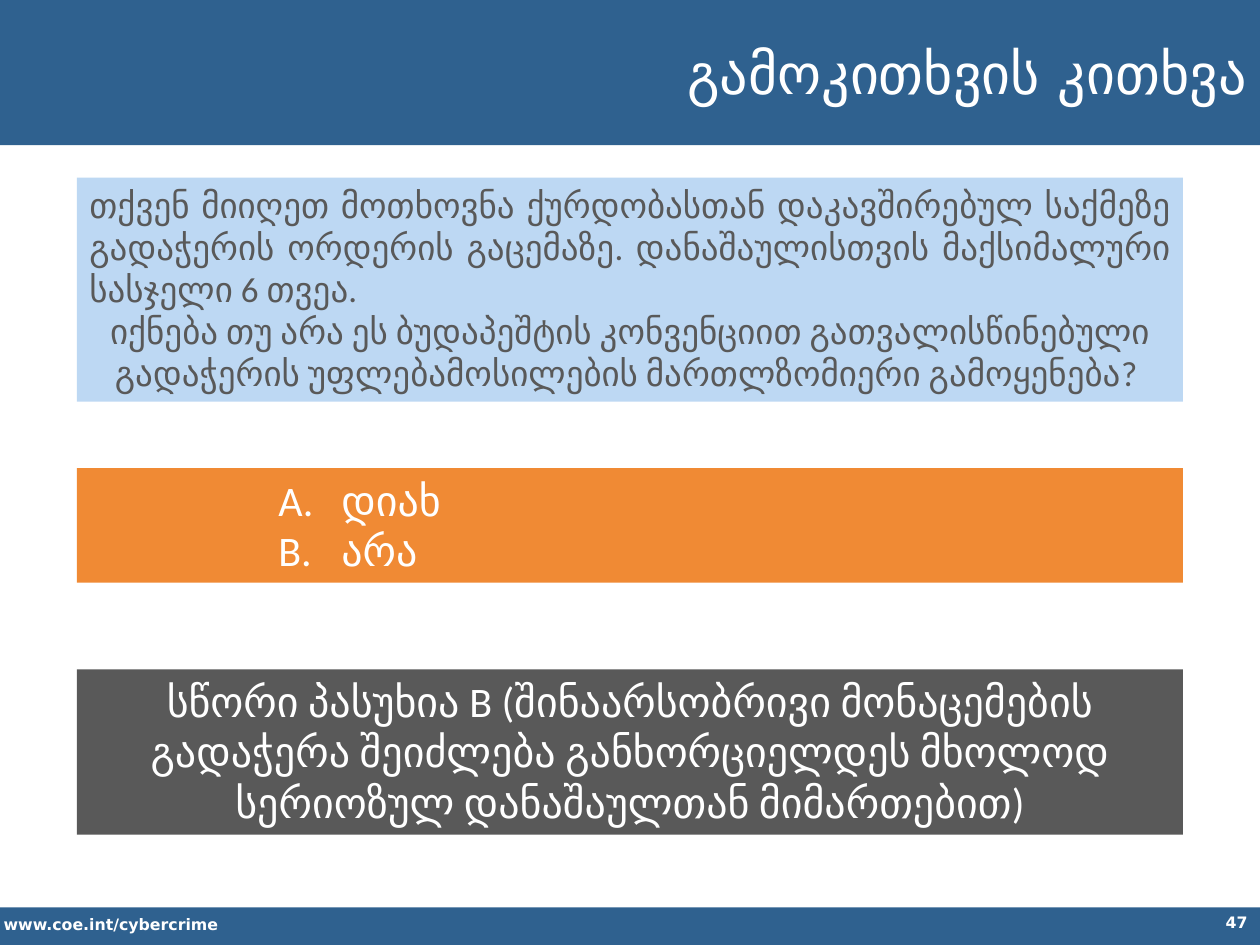
from dataclasses import dataclass

import pptx
import pptx.dml.color
import pptx.enum.shapes
import pptx.enum.text
import pptx.util
from lxml import etree
from pptx.oxml.ns import qn

Pt = pptx.util.Pt
ALIGN = pptx.enum.text.PP_ALIGN
ANCHOR = pptx.enum.text.MSO_ANCHOR
AUTO_SIZE = pptx.enum.text.MSO_AUTO_SIZE

COLORS = {
    "band": "2F618F",
    "question": "BDD8F3",
    "options": "F08A34",
    "answer": "595959",
    "dark": "595959",
    "white": "FFFFFF",
}
PANEL_LEFT, PANEL_WIDTH = 44, 632


@dataclass
class Line:
    text: str
    align: ALIGN = ALIGN.LEFT
    numbered: bool = False


@dataclass
class Style:
    size: float
    color: str = "white"
    name: str = "Calibri"
    bold: bool = False


@dataclass
class Panel:
    top: float
    height: float
    fill: str
    style: Style
    lines: list[Line]


FOOTER_STYLE = Style(9, name="DejaVu Sans", bold=True)

PANELS = [
    Panel(101.5, 128, "question", Style(20, "dark"), [
        Line("თქვენ მიიღეთ მოთხოვნა ქურდობასთან დაკავშირებულ საქმეზე გადაჭერის "
             "ორდერის გაცემაზე. დანაშაულისთვის მაქსიმალური სასჯელი 6 თვეა. ",
             ALIGN.JUSTIFY),
        Line("იქნება თუ არა ეს ბუდაპეშტის კონვენციით გათვალისწინებული გადაჭერის "
             "უფლებამოსილების მართლზომიერი გამოყენება? ", ALIGN.CENTER),
    ]),
    Panel(267.5, 65.5, "options", Style(24), [
        Line("დიახ", numbered=True),
        Line("არა", numbered=True),
    ]),
    Panel(382.5, 94.5, "answer", Style(24), [
        Line("სწორი პასუხია B (შინაარსობრივი მონაცემების გადაჭერა შეიძლება "
             "განხორციელდეს მხოლოდ სერიოზულ დანაშაულთან მიმართებით)", ALIGN.CENTER),
    ]),
]


def rgb(name: str) -> pptx.dml.color.RGBColor:
    return pptx.dml.color.RGBColor.from_string(COLORS[name])


def fill_shape(shape, color: str) -> None:
    shape.fill.solid()
    shape.fill.fore_color.rgb = rgb(color)


def add_letter_numbering(paragraph) -> None:
    properties = paragraph._p.get_or_add_pPr()
    properties.set("marL", str(Pt(144)))
    properties.set("indent", str(Pt(-36)))
    etree.SubElement(properties, qn("a:buFont"), typeface="+mj-lt")
    etree.SubElement(properties, qn("a:buAutoNum"), type="alphaUcPeriod")


def write_lines(shape, lines: list[Line], style: Style, anchor=ANCHOR.TOP) -> None:
    frame = shape.text_frame
    frame.word_wrap = True
    frame.auto_size = AUTO_SIZE.NONE
    frame.vertical_anchor = anchor
    for index, line in enumerate(lines):
        paragraph = frame.add_paragraph() if index else frame.paragraphs[0]
        paragraph.text = line.text
        paragraph.alignment = line.align
        if line.numbered:
            paragraph.level = 3
            add_letter_numbering(paragraph)
        paragraph.font.size = Pt(style.size)
        paragraph.font.name = style.name
        paragraph.font.bold = style.bold
        paragraph.font.color.rgb = rgb(style.color)


def add_rectangle(slide, left: float, top: float, width: float, height: float,
                  color: str):
    shape = slide.shapes.add_shape(pptx.enum.shapes.MSO_SHAPE.RECTANGLE,
                                   Pt(left), Pt(top), Pt(width), Pt(height))
    shape.shadow.inherit = False
    shape.line.fill.background()
    fill_shape(shape, color)
    return shape


def add_label(slide, left: float, top: float, width: float, height: float,
              line: Line) -> None:
    box = slide.shapes.add_textbox(Pt(left), Pt(top), Pt(width), Pt(height))
    write_lines(box, [line], FOOTER_STYLE)


def place_title(slide, text: str) -> None:
    title = slide.shapes.title
    title.left, title.top, title.width, title.height = Pt(158.5), Pt(5), Pt(561.5), Pt(73)
    fill_shape(title, "band")
    write_lines(title, [Line(text, ALIGN.RIGHT)], Style(32, name="DejaVu Sans"),
                ANCHOR.MIDDLE)
    # Bring the title in front of the header band
    title.element.getparent().append(title.element)


def main() -> None:
    presentation = pptx.Presentation()
    presentation.slide_width, presentation.slide_height = Pt(720), Pt(540)
    slide = presentation.slides.add_slide(presentation.slide_layouts[5])

    # Header and footer bands
    add_rectangle(slide, 0, -2, 720, 85, "band")
    add_rectangle(slide, 0, 518.5, 720, 23, "band")
    add_label(slide, -5, 519, 253.5, 18, Line("www.coe.int/cybercrime"))
    add_label(slide, 558, 518, 162, 22, Line("47", ALIGN.RIGHT))

    # Title
    place_title(slide, "გამოკითხვის კითხვა")

    # Question, options and answer
    for panel in PANELS:
        shape = add_rectangle(slide, PANEL_LEFT, panel.top, PANEL_WIDTH,
                              panel.height, panel.fill)
        write_lines(shape, panel.lines, panel.style)

    presentation.save("out.pptx")


if __name__ == "__main__":
    main()
